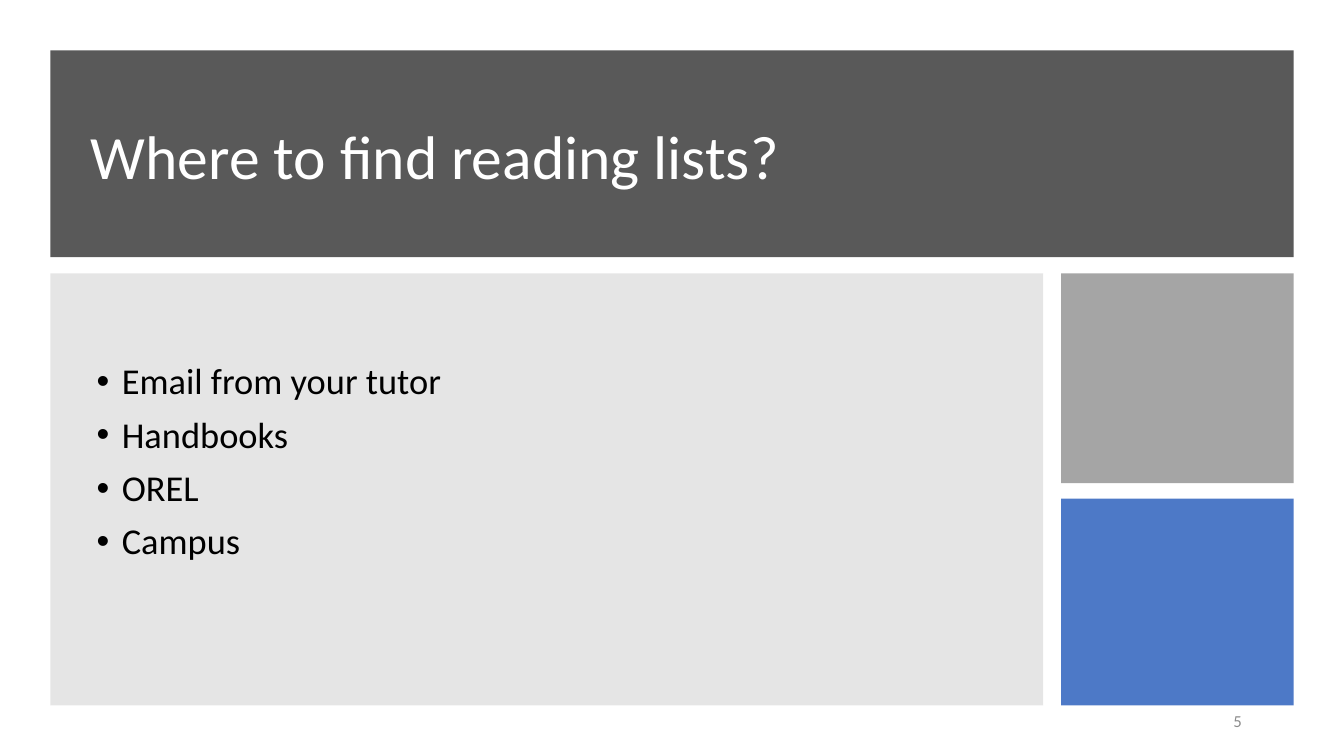
from dataclasses import dataclass

from lxml import etree
from pptx import Presentation
from pptx.dml.color import RGBColor
from pptx.enum.shapes import MSO_SHAPE
from pptx.enum.text import MSO_ANCHOR, MSO_AUTO_SIZE, PP_ALIGN
from pptx.oxml.ns import qn
from pptx.util import Pt

RECTANGLE = MSO_SHAPE.RECTANGLE
MIDDLE = MSO_ANCHOR.MIDDLE
NO_AUTOFIT = MSO_AUTO_SIZE.NONE
LEFT, RIGHT = PP_ALIGN.LEFT, PP_ALIGN.RIGHT
TITLE_ONLY = 5


@dataclass(frozen=True)
class Theme:
    font: str = "Calibri"
    band: str = "595959"
    panel: str = "808080"
    upper_tile: str = "A5A5A5"
    lower_tile: str = "4472C4"
    title_text: str = "FFFFFF"
    body_text: str = "000000"
    number_text: str = "8C8C8C"
    title_size: int = 44
    body_size: int = 26
    number_size: int = 12


THEME = Theme()
HEADING = "Where to find reading lists?"
SOURCES = ["Email from your tutor", "Handbooks", "OREL", "Campus"]
PAGE_NUMBER = "5"


def add_block(slide, box, color, opacity=100):
    """Add a borderless rectangle; opacity is a percentage."""
    block = slide.shapes.add_shape(RECTANGLE, *map(Pt, box))
    block.shadow.inherit = False
    block.fill.solid()
    block.fill.fore_color.rgb = RGBColor.from_string(color)
    block.line.fill.background()
    if opacity < 100:
        tint = block.element.spPr.find(".//" + qn("a:srgbClr"))
        etree.SubElement(tint, qn("a:alpha"), val=str(opacity * 1000))
    return block


def write_lines(holder, lines, size, color, **paragraph_format):
    frame = holder.text_frame
    frame.text = "\n".join(lines)
    frame_format = {"word_wrap": True, "auto_size": NO_AUTOFIT,
                    "vertical_anchor": MIDDLE}
    for name, value in frame_format.items():
        setattr(frame, name, value)
    for paragraph in frame.paragraphs:
        for name, value in paragraph_format.items():
            setattr(paragraph, name, value)
        for run in paragraph.runs:
            run.font.name = THEME.font
            run.font.size = Pt(size)
            run.font.color.rgb = RGBColor.from_string(color)
    return frame


def add_bullet(paragraph):
    properties = paragraph._p.get_or_add_pPr()
    properties.set("marL", str(Pt(18)))
    properties.set("indent", str(-Pt(18)))
    etree.SubElement(properties, qn("a:buFont"), typeface="Arial")
    etree.SubElement(properties, qn("a:buChar"), char="•")


def build_header(slide, box):
    left, top, width, height = box
    band = add_block(slide, box, THEME.band)
    title = slide.shapes.title
    title.element.addprevious(band.element)
    title.left, title.top = Pt(left + 21.6), Pt(top + 21.6)
    title.width, title.height = Pt(width - 48.5), Pt(height - 35.3)
    write_lines(title, [HEADING], THEME.title_size, THEME.title_text,
                alignment=LEFT, line_spacing=0.9)


def build_source_list(slide, box):
    left, top, width, height = box
    add_block(slide, box, THEME.panel, opacity=20)
    sources = slide.shapes.add_textbox(
        Pt(left + 25.9), Pt(top + 24.5), Pt(width - 50.4), Pt(height - 86.7))
    frame = write_lines(sources, SOURCES, THEME.body_size, THEME.body_text,
                        alignment=LEFT, line_spacing=0.9, space_before=Pt(10))
    for paragraph in frame.paragraphs:
        add_bullet(paragraph)


def build_tiles(slide, box):
    left, top, width, height = box
    upper, lower = 149.8, 147.6
    add_block(slide, (left, top, width, upper), THEME.upper_tile)
    add_block(slide, (left, top + height - lower, width, lower),
              THEME.lower_tile, opacity=95)


def build_page_number(slide, box):
    number = slide.shapes.add_textbox(*map(Pt, box))
    write_lines(number, [PAGE_NUMBER], THEME.number_size, THEME.number_text,
                alignment=RIGHT)


def main():
    deck = Presentation()
    deck.slide_width, deck.slide_height = Pt(960), Pt(540)
    slide = deck.slides.add_slide(deck.slide_layouts[TITLE_ONLY])
    build_header(slide, (36, 36, 888, 147.6))
    build_source_list(slide, (36, 195.3, 709.2, 308.5))
    build_tiles(slide, (758, 195.3, 166, 308.5))
    build_page_number(slide, (678.2, 500.4, 216, 28.8))
    deck.save("out.pptx")


if __name__ == "__main__":
    main()
